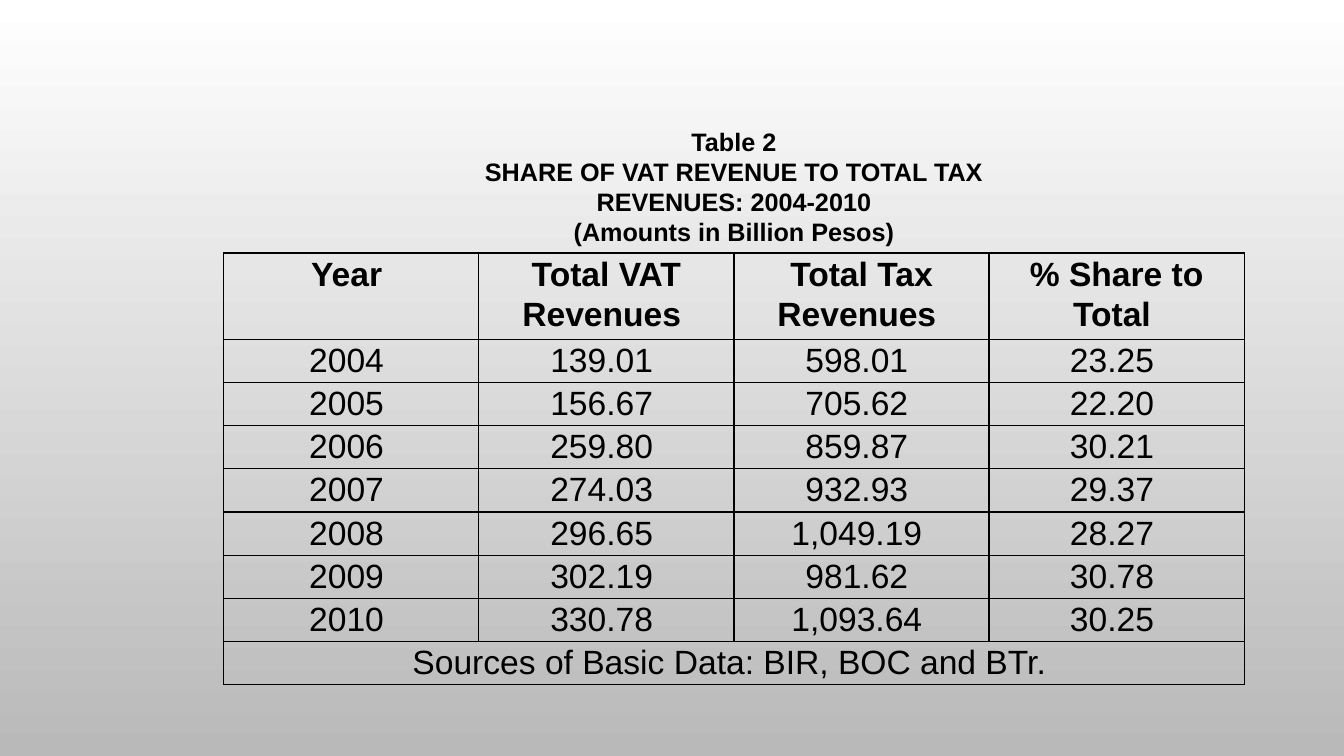
from dataclasses import dataclass

from lxml.etree import SubElement
from pptx import Presentation
from pptx.dml.color import RGBColor
from pptx.enum.text import MSO_ANCHOR as Anchor, MSO_AUTO_SIZE as AutoSize, PP_ALIGN as Align
from pptx.oxml.ns import qn
from pptx.util import Pt

PX = 9525
SLIDE_WIDTH, SLIDE_HEIGHT = 1280, 720
HEADER_HEIGHT, ROW_HEIGHT = 82, 41
LINE_SPACING = 1.07
COLORS = {"ink": "000000", "top": "FFFFFF", "bottom": "B9B9B9"}
TITLE_FONT = {"name": "Arial", "size": Pt(18), "bold": True}
HEADER_FONT = {"name": "Arial", "size": Pt(24), "bold": True}
BODY_FONT = {**HEADER_FONT, "bold": False}
CELL_FORMAT = {
    "margin_left": 7 * PX,
    "margin_right": 7 * PX,
    "margin_top": 0,
    "margin_bottom": 0,
    "vertical_anchor": Anchor.TOP,
}
TITLE_FORMAT = {
    "word_wrap": True,
    "auto_size": AutoSize.SHAPE_TO_FIT_TEXT,
    "vertical_anchor": Anchor.TOP,
}


@dataclass(frozen=True)
class Box:
    left: int
    top: int
    width: int
    height: int

    def emu(self) -> tuple:
        return tuple(side * PX for side in (self.left, self.top, self.width, self.height))


@dataclass(frozen=True)
class YearRevenue:
    year: str
    vat: str
    tax: str
    share: str

    def values(self) -> tuple:
        return self.year, self.vat, self.tax, self.share


TITLE_LINES = [
    "Table 2",
    "SHARE OF VAT REVENUE TO TOTAL TAX REVENUES: 2004-2010",
    "(Amounts in Billion Pesos)",
]
HEADINGS = ("Year", "Total VAT Revenues", "Total Tax Revenues", "% Share to Total")
REVENUES = [
    YearRevenue("2004", "139.01", "598.01", "23.25"),
    YearRevenue("2005", "156.67", "705.62", "22.20"),
    YearRevenue("2006", "259.80", "859.87", "30.21"),
    YearRevenue("2007", "274.03", "932.93", "29.37"),
    YearRevenue("2008", "296.65", "1,049.19", "28.27"),
    YearRevenue("2009", "302.19", "981.62", "30.78"),
    YearRevenue("2010", "330.78", "1,093.64", "30.25"),
]
SOURCES = ("Sources of Basic Data: BIR, BOC and BTr.", "", "", "")
TITLE_BOX = Box(379, 115, 640, 126)
TABLE_BOX = Box(213, 241, 972, HEADER_HEIGHT + ROW_HEIGHT * (len(REVENUES) + 1))


def apply_format(target, values: dict) -> None:
    for name, value in values.items():
        setattr(target, name, value)


def format_paragraph(paragraph, font: dict) -> None:
    paragraph.alignment = Align.CENTER
    apply_format(paragraph.font, font)
    paragraph.font.color.rgb = RGBColor.from_string(COLORS["ink"])


def paint_background(slide) -> None:
    fill = slide.background.fill
    fill.gradient()
    fill.gradient_angle = 270
    for stop, name in zip(fill.gradient_stops, ("top", "bottom")):
        stop.color.rgb = RGBColor.from_string(COLORS[name])


def add_borders(cell) -> None:
    properties = cell._tc.get_or_add_tcPr()
    for side in ("lnL", "lnR", "lnT", "lnB"):
        line = SubElement(properties, qn(f"a:{side}"), w=str(Pt(1)))
        fill = SubElement(line, qn("a:solidFill"))
        SubElement(fill, qn("a:srgbClr"), val=COLORS["ink"])


def fill_cell(cell, text: str, font: dict) -> None:
    add_borders(cell)
    cell.fill.background()
    apply_format(cell, CELL_FORMAT)
    if text:
        cell.text = f"{text} "
    paragraph = cell.text_frame.paragraphs[0]
    paragraph.line_spacing = LINE_SPACING
    format_paragraph(paragraph, font)


def add_revenue_table(slide) -> None:
    rows = [HEADINGS, *(revenue.values() for revenue in REVENUES), SOURCES]
    frame = slide.shapes.add_table(len(rows), len(HEADINGS), *TABLE_BOX.emu())
    table = frame.table
    apply_format(table, {"first_row": False, "horz_banding": False})
    for row_index, texts in enumerate(rows):
        is_header = row_index == 0
        table.rows[row_index].height = (HEADER_HEIGHT if is_header else ROW_HEIGHT) * PX
        for column_index, text in enumerate(texts):
            cell = table.cell(row_index, column_index)
            fill_cell(cell, text, HEADER_FONT if is_header else BODY_FONT)
    last_row = len(rows) - 1
    table.cell(last_row, 0).merge(table.cell(last_row, len(HEADINGS) - 1))


def write_title(slide) -> None:
    title = slide.shapes.title
    title.left, title.top, title.width, title.height = TITLE_BOX.emu()
    title.text_frame.text = "\n".join(TITLE_LINES)
    apply_format(title.text_frame, TITLE_FORMAT)
    for paragraph in title.text_frame.paragraphs:
        format_paragraph(paragraph, TITLE_FONT)


def main() -> None:
    presentation = Presentation()
    presentation.slide_width = SLIDE_WIDTH * PX
    presentation.slide_height = SLIDE_HEIGHT * PX
    slide = presentation.slides.add_slide(presentation.slide_layouts.get_by_name("Title Only"))
    paint_background(slide)
    add_revenue_table(slide)
    write_title(slide)
    presentation.save("out.pptx")


if __name__ == "__main__":
    main()
